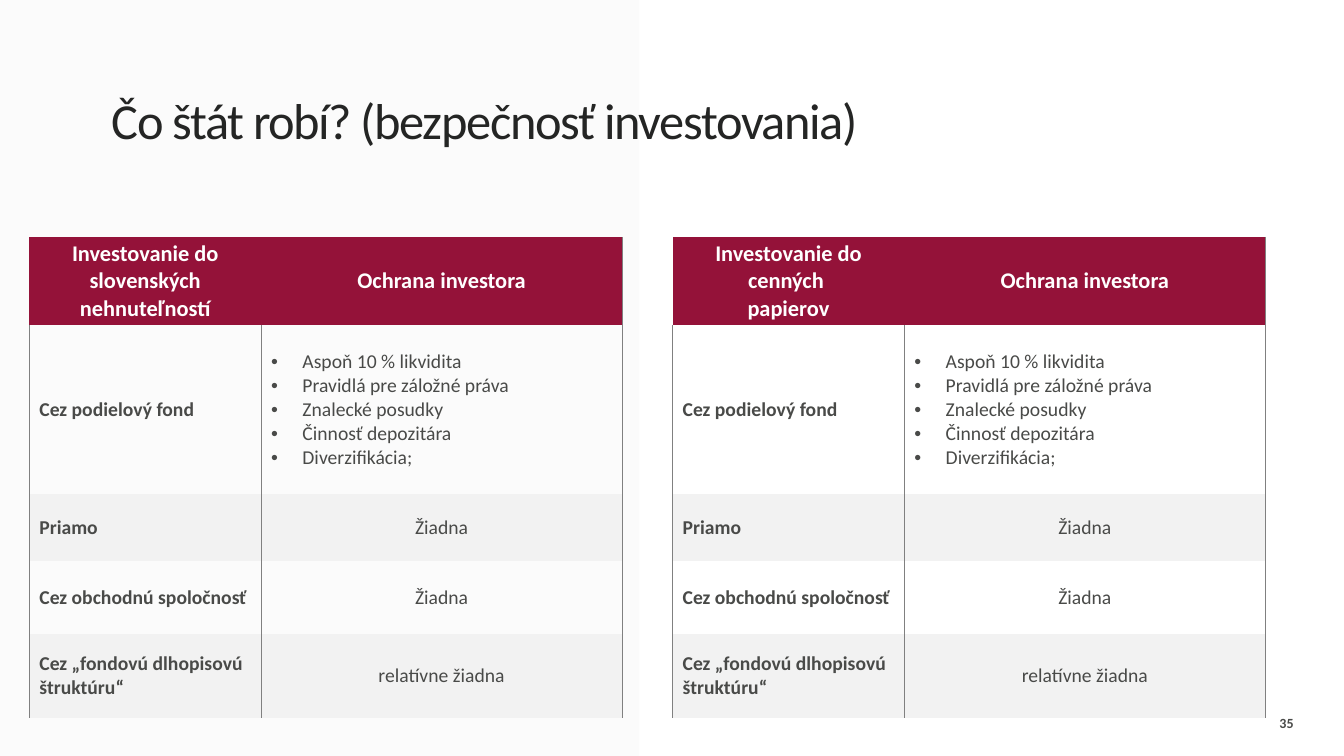
from dataclasses import dataclass

from lxml import etree
from pptx import Presentation, util as u
from pptx.dml.color import RGBColor
from pptx.enum import shapes, text
from pptx.oxml.ns import qn


@dataclass(frozen=True)
class Theme:
    font: str = "Calibri"
    ink: str = "242524"
    body: str = "494A48"
    accent: str = "941239"
    light: str = "F2F2F2"
    white: str = "FFFFFF"
    rule: str = "808080"
    title_size: int = 36
    header_size: int = 16
    body_size: int = 14
    number_size: int = 10
    rule_width: float = 0.5


class SlideBuilder:
    def __init__(self, deck, theme):
        self.deck = deck
        self.theme = theme
        self.slide = deck.slides.add_slide(deck.slide_layouts[6])

    def x(self, percent):
        return round(self.deck.slide_width * percent / 100)

    def y(self, percent):
        return round(self.deck.slide_height * percent / 100)

    def box(self, left, top, width, height):
        return self.x(left), self.y(top), self.x(width), self.y(height)

    def style(self, paragraph, size, color, bold=False, align=text.PP_ALIGN.LEFT):
        paragraph.alignment = align
        font = paragraph.font
        font.name, font.size, font.bold = self.theme.font, u.Pt(size), bold
        font.color.rgb = RGBColor.from_string(color)

    def panel(self, area, color, opacity):
        panel = self.slide.shapes.add_shape(shapes.MSO_SHAPE.RECTANGLE, *self.box(*area))
        panel.shadow.inherit = False
        panel.line.fill.background()
        panel.fill.solid()
        panel.fill.fore_color.rgb = RGBColor.from_string(color)
        tint = panel.fill._xPr.find(".//" + qn("a:srgbClr"))
        etree.SubElement(tint, qn("a:alpha"), val=str(opacity * 1000))

    def label(self, words, area, anchor):
        frame = self.slide.shapes.add_textbox(*self.box(*area)).text_frame
        frame.word_wrap = True
        frame.vertical_anchor = anchor
        frame.text = words
        return frame

    def title(self, words, area):
        frame = self.label(words, area, text.MSO_ANCHOR.TOP)
        frame.margin_left = frame.margin_right = frame.margin_bottom = 0
        frame.margin_top = u.Inches(0.21)
        heading = frame.paragraphs[0]
        heading.line_spacing = 0.8
        self.style(heading, self.theme.title_size, self.theme.ink)
        heading.font._rPr.set("spc", "-100")

    def page_number(self, number, area):
        frame = self.label(number, area, text.MSO_ANCHOR.MIDDLE)
        self.style(frame.paragraphs[0], self.theme.number_size, self.theme.body,
                   True, text.PP_ALIGN.CENTER)

    def borders(self, cell, ruled):
        properties = cell._tc.get_or_add_tcPr()
        for position, side in enumerate(("lnL", "lnR", "lnT", "lnB")):
            line = etree.Element(qn("a:" + side), w=str(u.Pt(self.theme.rule_width)))
            if side in ruled:
                fill = etree.SubElement(line, qn("a:solidFill"))
                etree.SubElement(fill, qn("a:srgbClr"), val=self.theme.rule)
            else:
                etree.SubElement(line, qn("a:noFill"))
            properties.insert(position, line)

    def bullet(self, paragraph):
        indent = u.Inches(0.31)
        properties = paragraph._p.get_or_add_pPr()
        properties.set("marL", str(indent))
        properties.set("indent", str(-indent))
        etree.SubElement(properties, qn("a:buFont"), typeface="Arial")
        etree.SubElement(properties, qn("a:buChar"), char="•")

    def fill_cell(self, cell, words, row, column):
        theme = self.theme
        header = row == 0
        listed = isinstance(words, list)
        cell.text = "\n".join(words) if listed else words
        cell.vertical_anchor = text.MSO_ANCHOR.MIDDLE
        if header:
            cell.margin_left = cell.margin_right = u.Inches(0.07)
            cell.margin_top = cell.margin_bottom = u.Inches(0.03)
        centred = header or (column == 1 and not listed)
        for paragraph in cell.text_frame.paragraphs:
            if listed:
                self.bullet(paragraph)
            self.style(paragraph,
                       theme.header_size if header else theme.body_size,
                       theme.white if header else theme.body,
                       header or column == 0,
                       text.PP_ALIGN.CENTER if centred else text.PP_ALIGN.LEFT)
        if header or row % 2 == 0:
            cell.fill.solid()
            cell.fill.fore_color.rgb = RGBColor.from_string(
                theme.accent if header else theme.light)
        else:
            cell.fill.background()
        header_rules = ("lnR",) if column == 1 else ()
        self.borders(cell, header_rules if header else ("lnL", "lnR"))

    def table(self, left, top, widths, heights, rows):
        area = self.box(left, top, sum(widths), sum(heights))
        table = self.slide.shapes.add_table(len(rows), len(widths), *area).table
        table.first_row = table.horz_banding = False
        for column, width in zip(table.columns, widths):
            column.width = self.x(width)
        for row, height in zip(table.rows, heights):
            row.height = self.y(height)
        for r, row in enumerate(rows):
            for c, words in enumerate(row):
                self.fill_cell(table.cell(r, c), words, r, c)


PROTECTION = [
    ("Cez podielový fond", ["Aspoň 10 % likvidita", "Pravidlá pre záložné práva",
                            "Znalecké posudky", "Činnosť depozitára", "Diverzifikácia;"]),
    ("Priamo", "Žiadna"),
    ("Cez obchodnú spoločnosť", "Žiadna"),
    ("Cez „fondovú dlhopisovú štruktúru“", "relatívne žiadna"),
]
INVESTMENTS = [
    (2.18, "Investovanie do slovenských nehnuteľností"),
    (50.04, "Investovanie do cenných \vpapierov"),
]
COLUMN_WIDTHS = (17.25, 26.86)
ROW_HEIGHTS = (11.73, 22.27, 8.93, 9.6, 11.07)


def main():
    deck = Presentation()
    deck.slide_width, deck.slide_height = u.Inches(13.33), u.Inches(7.5)
    theme = Theme()
    page = SlideBuilder(deck, theme)
    page.panel((0, 0, 47.56, 100), theme.light, 30)
    page.title("Čo štát robí? (bezpečnosť investovania)", (8.33, 10.53, 75.09, 18.27))
    for left, investment in INVESTMENTS:
        header = (investment, "Ochrana investora")
        page.table(left, 31.33, COLUMN_WIDTHS, ROW_HEIGHTS, [header, *PROTECTION])
    page.page_number("35", (91.6, 92.93, 8.25, 5.33))
    deck.save("out.pptx")


if __name__ == "__main__":
    main()
